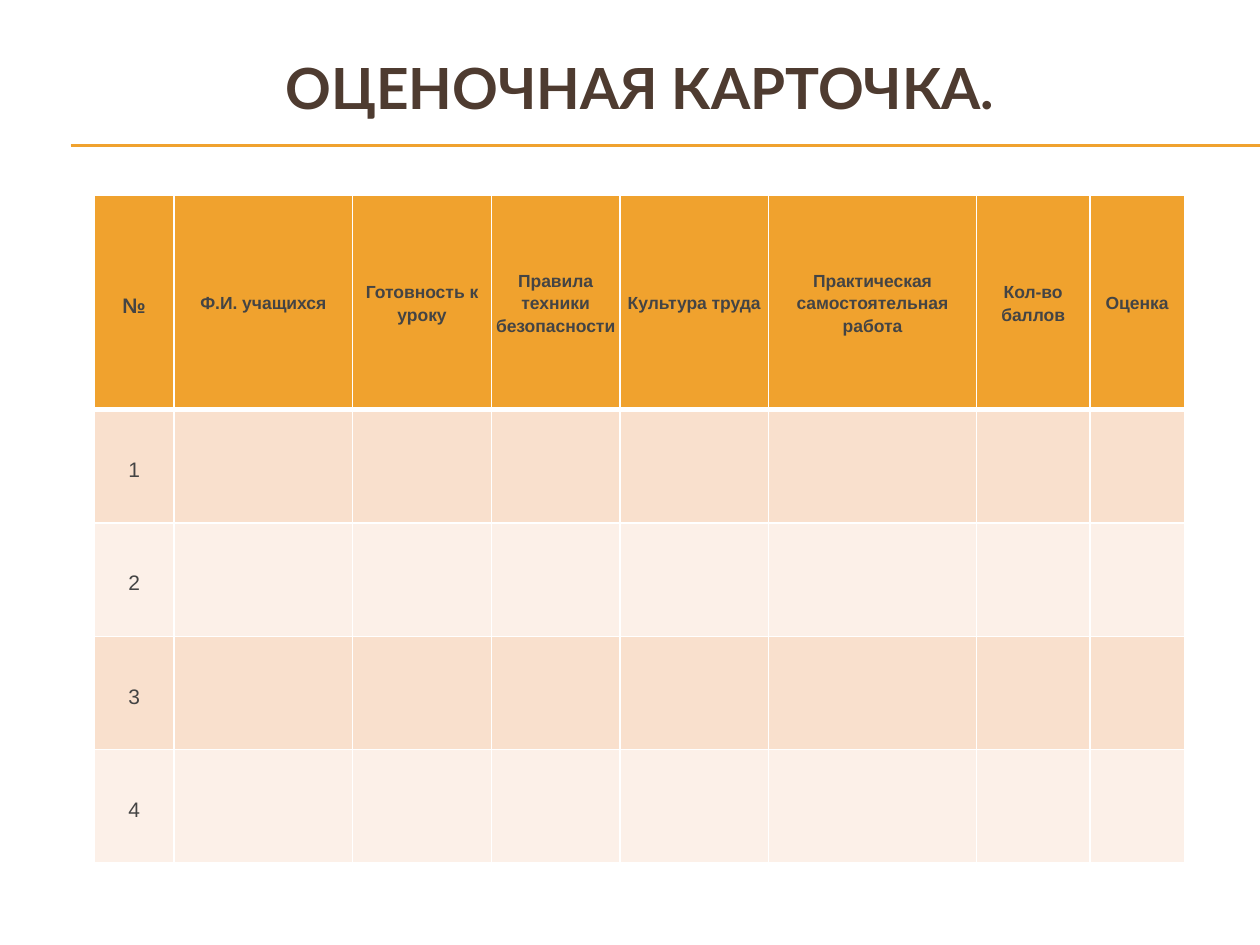
from lxml.etree import SubElement
from pptx import Presentation
from pptx.dml.color import RGBColor
from pptx.enum.shapes import MSO_CONNECTOR
from pptx.enum.text import MSO_ANCHOR, PP_ALIGN
from pptx.oxml.ns import qn
from pptx.util import Inches, Pt

COLORS = {
    "accent": "F0A22E",
    "title": "4E3B30",
    "text": "444444",
    "band_dark": "F9E0CD",
    "band_light": "FCF0E8",
    "border": "FFFFFF",
}
HEADERS = [
    "№",
    "Ф.И. учащихся",
    "Готовность к уроку",
    "Правила техники безопасности",
    "Культура труда",
    "Практическая самостоятельная работа",
    "Кол-во баллов",
    "Оценка",
]
COLUMN_WIDTHS = [0.63, 1.42, 1.1, 1.02, 1.18, 1.65, 0.9, 0.75]
ROW_HEIGHTS = [1.7] + [0.9] * 4
NUMBER_SPACING = {"line_spacing": Pt(18), "space_after": Pt(18)}
HEADER_SPACING = {"line_spacing": 1.15}
ZERO_MARGINS = {f"margin_{side}": 0 for side in ("left", "top", "right", "bottom")}


def write_text(paragraph, text, color, font_format, paragraph_format):
    run = paragraph.add_run()
    run.text = text
    run.font.color.rgb = RGBColor.from_string(COLORS[color])
    for name, value in font_format.items():
        setattr(run.font, name, value)
    paragraph.alignment = PP_ALIGN.CENTER
    for name, value in paragraph_format.items():
        setattr(paragraph, name, value)


def set_borders(cell, widths):
    properties = cell._tc.get_or_add_tcPr()
    for side, width in widths.items():
        line = SubElement(properties, qn(f"a:ln{side}"), w=str(Pt(width)))
        fill = SubElement(line, qn("a:solidFill"))
        SubElement(fill, qn("a:srgbClr"), val=COLORS["border"])


presentation = Presentation()
presentation.slide_width = Inches(10)
presentation.slide_height = Inches(7.5)
slide = presentation.slides.add_slide(presentation.slide_layouts[6])

for y in (1.15, 1.16):
    rule = slide.shapes.add_connector(
        MSO_CONNECTOR.STRAIGHT, Inches(0.56), Inches(y), Inches(10), Inches(y)
    )
    rule.line.color.rgb = RGBColor.from_string(COLORS["accent"])
    rule.line.width = Pt(0.75)
    SubElement(rule._element.spPr, qn("a:effectLst"))

title = slide.shapes.add_textbox(Inches(0.33), Inches(0.42), Inches(9.5), Inches(0.54))
title_format = {"word_wrap": True, "vertical_anchor": MSO_ANCHOR.MIDDLE, **ZERO_MARGINS}
for name, value in title_format.items():
    setattr(title.text_frame, name, value)
write_text(
    title.text_frame.paragraphs[0],
    "ОЦЕНОЧНАЯ КАРТОЧКА.",
    "title",
    {"name": "Lato", "size": Pt(32.4), "bold": True},
    {},
)

table = slide.shapes.add_table(
    len(ROW_HEIGHTS),
    len(HEADERS),
    Inches(0.75),
    Inches(1.55),
    Inches(sum(COLUMN_WIDTHS)),
    Inches(sum(ROW_HEIGHTS)),
).table
for column, width in zip(table.columns, COLUMN_WIDTHS):
    column.width = Inches(width)

for row_index, height in enumerate(ROW_HEIGHTS):
    table.rows[row_index].height = Inches(height)
    is_header = row_index == 0
    if is_header:
        fill_color = "accent"
        texts = HEADERS
    else:
        fill_color = "band_dark" if row_index % 2 else "band_light"
        texts = [str(row_index)] + [""] * (len(HEADERS) - 1)
    borders = {"L": 1, "R": 1, "T": 3 if row_index == 1 else 1, "B": 3 if is_header else 1}
    for column_index, text in enumerate(texts):
        cell = table.cell(row_index, column_index)
        set_borders(cell, borders)
        cell.fill.solid()
        cell.fill.fore_color.rgb = RGBColor.from_string(COLORS[fill_color])
        if not text:
            continue
        is_number = column_index == 0
        cell_format = {"vertical_anchor": MSO_ANCHOR.MIDDLE, **ZERO_MARGINS}
        for name, value in cell_format.items():
            setattr(cell, name, value)
        write_text(
            cell.text_frame.paragraphs[0],
            text,
            "text",
            {"name": "Arial", "size": Pt(12 if is_number else 10), "bold": is_header},
            NUMBER_SPACING if is_number else HEADER_SPACING,
        )

presentation.save("out.pptx")
